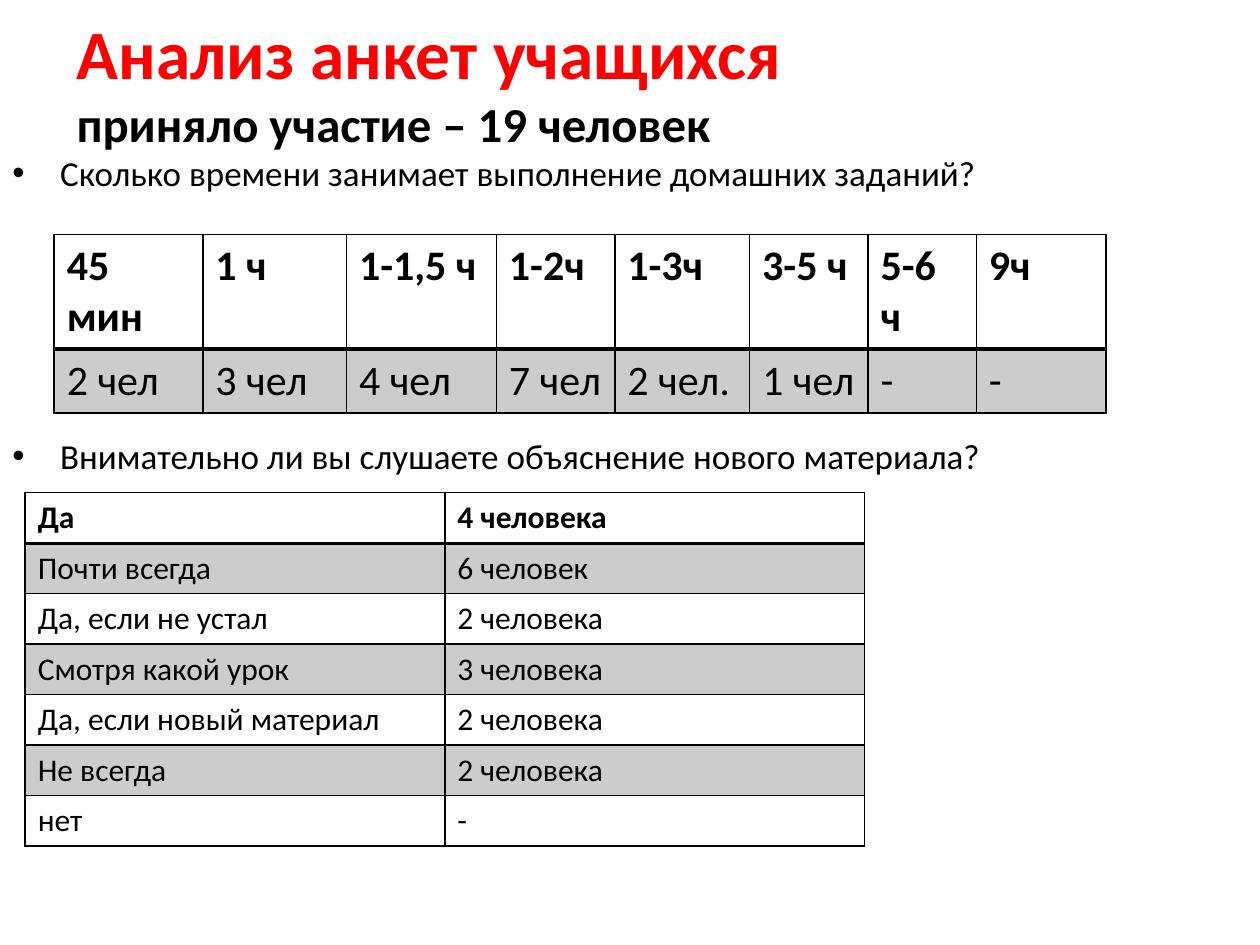
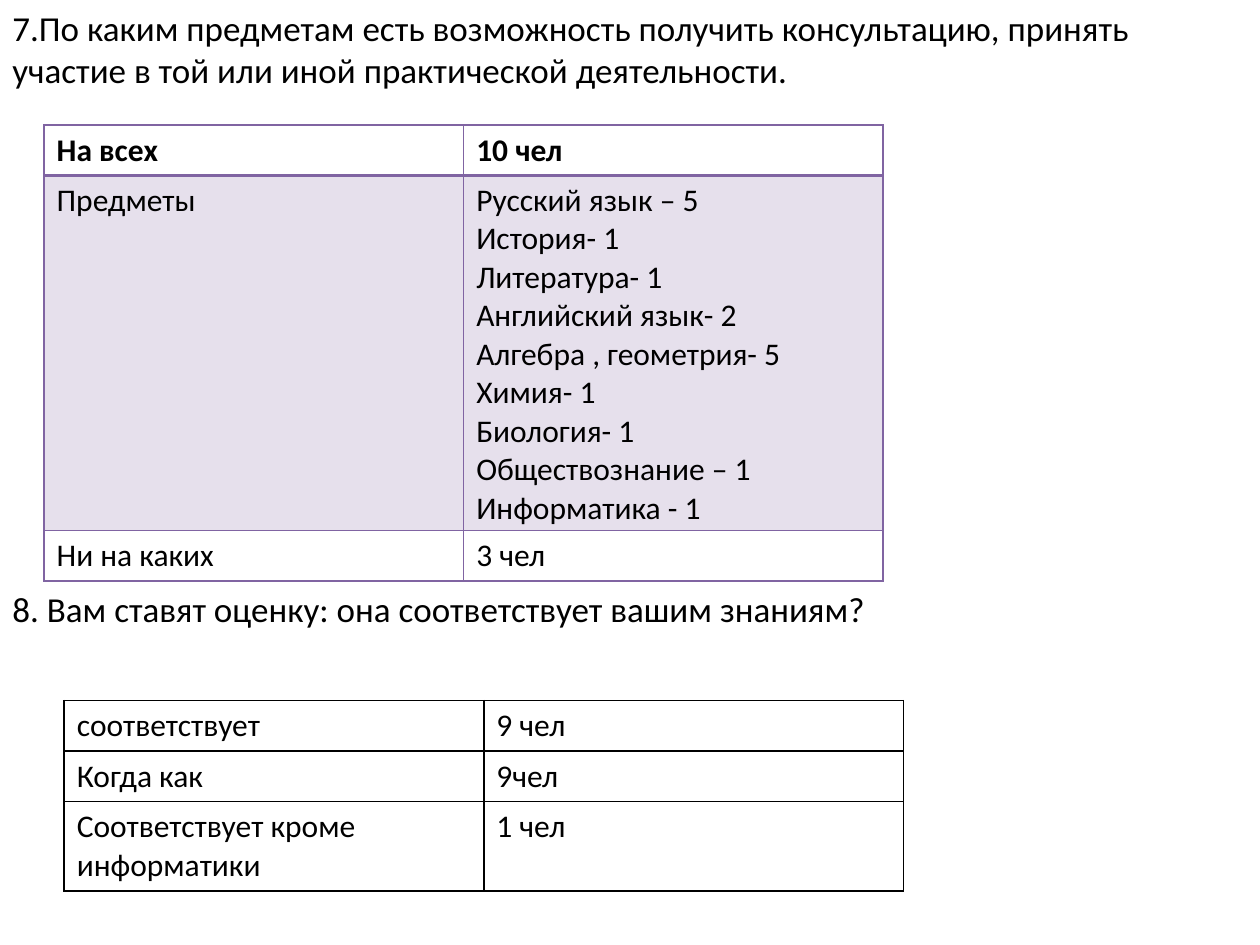
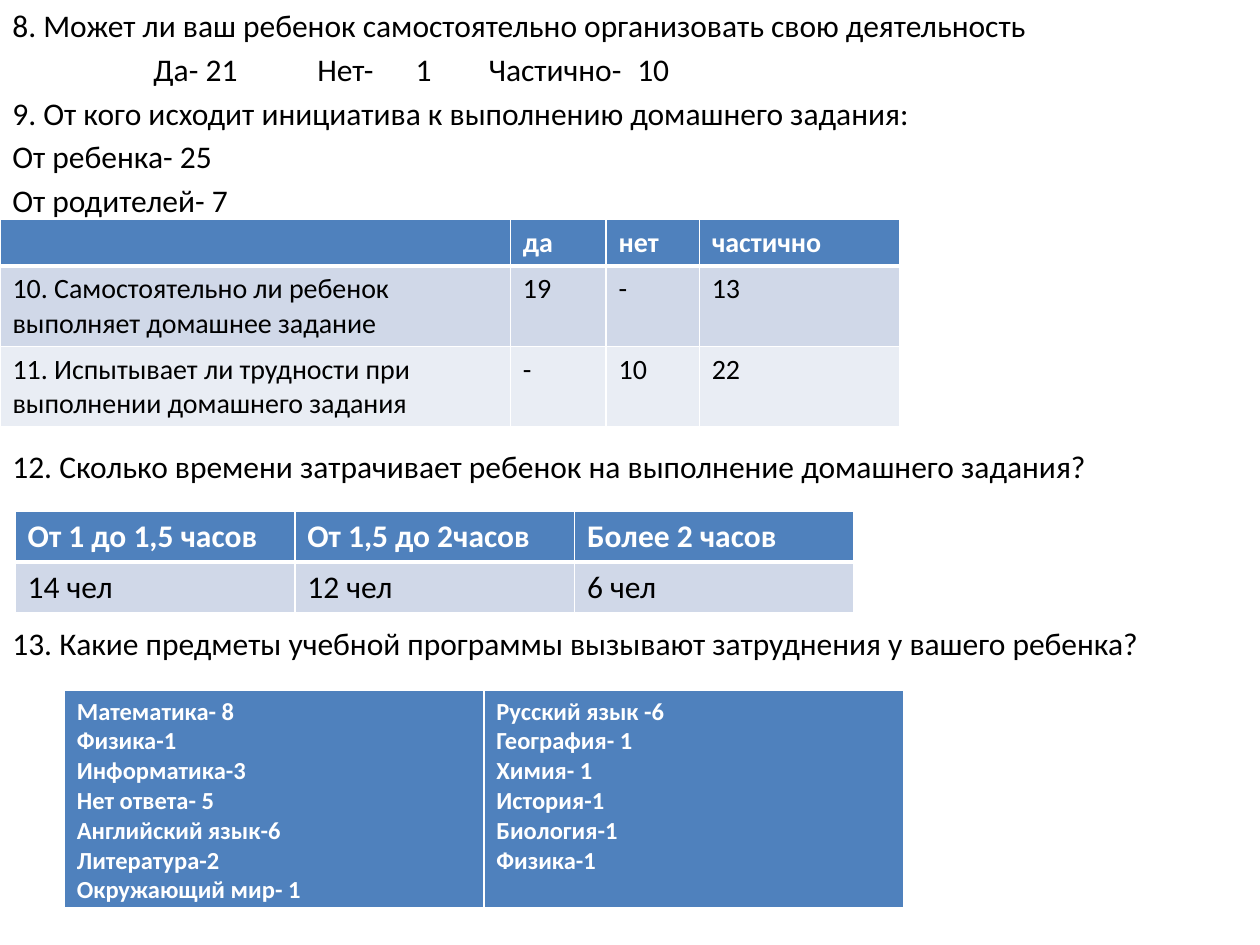
from dataclasses import dataclass

from lxml import etree
from pptx import Presentation
from pptx.dml.color import RGBColor
from pptx.enum.text import MSO_ANCHOR
from pptx.oxml.ns import qn
from pptx.util import Inches, Pt

MIDDLE = MSO_ANCHOR.MIDDLE
FONT = "Calibri"
COLORS = {
    "black": "000000",
    "white": "FFFFFF",
    "red": "FF0000",
    "gray": "CCCCCC",
    "purple": "8064A2",
    "lilac": "E6E0EC",
    "blue": "4F81BD",
    "blue_band": "D0D8E8",
    "blue_pale": "E9EDF4",
}


@dataclass
class TableLook:
    border: str
    header_fill: str = ""
    header_text: str = "black"
    header_bold: bool = True
    header_rule: int = 2
    bands: tuple = ("", "")


GRAY_LOOK = TableLook("black", bands=("gray", ""))
PURPLE_LOOK = TableLook("purple", bands=("lilac", ""))
PLAIN_LOOK = TableLook("black", header_bold=False, header_rule=1)
BLUE_LOOK = TableLook("white", "blue", "white", header_rule=3,
                      bands=("blue_band", "blue_pale"))


def rgb(color):
    return RGBColor.from_string(COLORS[color])


def style_font(font, size, color="black", bold=False):
    font.name = FONT
    font.size = Pt(size)
    font.bold = bold
    font.color.rgb = rgb(color)


def add_text_frame(slide, left, top, width, height):
    frame = slide.shapes.add_textbox(
        Inches(left), Inches(top), Inches(width), Inches(height)).text_frame
    frame.word_wrap = True
    return frame


def add_title(slide, heading, subtitle):
    frame = add_text_frame(slide, 0.51, 0.15, 9, 0.99)
    frame.vertical_anchor = MIDDLE
    paragraph = frame.paragraphs[0]
    heading_run = paragraph.add_run()
    heading_run.text = heading
    style_font(heading_run.font, 39.6, "red", True)
    paragraph.add_line_break()
    subtitle_run = paragraph.add_run()
    subtitle_run.text = subtitle
    style_font(subtitle_run.font, 27.9, bold=True)


def add_bullet(paragraph):
    properties = paragraph._p.get_or_add_pPr()
    properties.set("marL", str(Inches(0.38)))
    properties.set("indent", str(-Inches(0.38)))
    bullet_font = etree.Element(qn("a:buFont"), typeface="Arial")
    bullet = etree.Element(qn("a:buChar"), char="•")
    properties.insert(0, bullet_font)
    properties.insert(1, bullet)


def add_tab_stops(paragraph, positions):
    tabs = etree.Element(qn("a:tabLst"))
    for position in positions:
        etree.SubElement(tabs, qn("a:tab"), pos=str(Inches(position)), algn="l")
    paragraph._p.get_or_add_pPr().insert(0, tabs)


def add_question(slide, top, lines, size, height=0.45, bulleted=False):
    frame = add_text_frame(slide, 0, top, 10, height)
    frame.text = "\n".join(lines)
    for index, paragraph in enumerate(frame.paragraphs):
        style_font(paragraph.font, size)
        if index:
            paragraph.space_before = Pt(3.4)
        if bulleted:
            add_bullet(paragraph)
    return frame


def set_border(cell, side, color, width):
    line = etree.SubElement(cell._tc.get_or_add_tcPr(), qn(f"a:ln{side}"),
                            w=str(Pt(width)))
    fill = etree.SubElement(line, qn("a:solidFill"))
    etree.SubElement(fill, qn("a:srgbClr"), val=COLORS[color])


def style_cell(cell, row, size, look):
    header = row == 0
    widths = {"L": 1, "R": 1,
              "T": look.header_rule if row == 1 else 1,
              "B": look.header_rule if header else 1}
    for side, width in widths.items():
        set_border(cell, side, look.border, width)
    fill = look.header_fill if header else look.bands[(row - 1) % 2]
    if fill:
        cell.fill.solid()
        cell.fill.fore_color.rgb = rgb(fill)
    else:
        cell.fill.background()
    for paragraph in cell.text_frame.paragraphs:
        style_font(paragraph.font, size,
                   look.header_text if header else "black",
                   header and look.header_bold)


def add_answers(slide, left, top, widths, heights, rows, size, look):
    table = slide.shapes.add_table(
        len(rows), len(widths), Inches(left), Inches(top),
        Inches(sum(widths)), Inches(sum(heights))).table
    table.first_row = look.header_bold
    for column, width in zip(table.columns, widths):
        column.width = Inches(width)
    for row, height in zip(table.rows, heights):
        row.height = Inches(height)
    for row, answers in enumerate(rows):
        for column, answer in enumerate(answers):
            cell = table.cell(row, column)
            cell.text = answer
            style_cell(cell, row, size, look)


def build_pupil_survey(slide):
    add_title(slide, "Анализ анкет учащихся", "приняло участие – 19 человек")
    add_question(slide, 1.15,
                 ["Сколько времени занимает выполнение домашних заданий?"],
                 20, bulleted=True)
    add_question(slide, 3.4,
                 ["Внимательно ли вы слушаете объяснение нового материала?"],
                 20, bulleted=True)
    homework_time = [
        ["45 мин", "1 ч", "1-1,5 ч", "1-2ч", "1-3ч", "3-5 ч", "5-6 ч", "9ч"],
        ["2 чел", "3 чел", "4 чел", "7 чел", "2 чел.", "1 чел", "-", "-"],
    ]
    add_answers(slide, 0.43, 1.86,
                [1.18, 1.14, 1.19, 0.94, 1.07, 0.94, 0.86, 1.03],
                [0.91, 0.51], homework_time, 24, GRAY_LOOK)
    attention = [
        ["Да", "4 человека"],
        ["Почти всегда", "6 человек"],
        ["Да, если не устал", "2 человека"],
        ["Смотря какой урок", "3 человека"],
        ["Да, если новый материал", "2 человека"],
        ["Не всегда", "2 человека"],
        ["нет", "-"],
    ]
    add_answers(slide, 0.2, 3.91, [3.33] * 2, [0.4] * 7, attention, 18,
                GRAY_LOOK)


def build_consultations(slide):
    add_question(slide, 0, [
        "7.По каким предметам есть возможность получить консультацию, принять "
        "участие в той или иной практической деятельности."], 20, 0.8)
    add_question(slide, 4.61, [
        "8. Вам ставят оценку: она соответствует вашим знаниям?"], 20)
    subjects = [
        "Русский язык – 5", "История- 1", "Литература- 1",
        "Английский язык- 2", "Алгебра , геометрия- 5", "Химия- 1",
        "Биология- 1", "Обществознание – 1", "Информатика - 1",
    ]
    consultations = [
        ["На всех", "10 чел"],
        ["Предметы", "\n".join(subjects)],
        ["Ни на каких", "3 чел"],
    ]
    add_answers(slide, 0.35, 0.99, [3.33] * 2, [0.4, 2.82, 0.4],
                consultations, 18, PURPLE_LOOK)
    grades = [
        ["соответствует", "9 чел"],
        ["Когда как", "9чел"],
        ["Соответствует кроме информатики", "1 чел"],
    ]
    add_answers(slide, 0.51, 5.56, [3.33] * 2, [0.4, 0.4, 0.71], grades, 18,
                PLAIN_LOOK)


def build_parent_survey(slide):
    independence = add_question(slide, 0, [
        "8. Может ли ваш ребенок самостоятельно организовать свою деятельность",
        "\tДа- 21\tНет-\t1\tЧастично-\t10",
        "9. От кого исходит инициатива к выполнению домашнего задания:",
        "От ребенка- 25",
        "От родителей- 7",
    ], 18, 1.8)
    add_tab_stops(independence.paragraphs[1], [1.12, 2.42, 3.2, 3.78, 4.96])
    add_question(slide, 3.5, [
        "12. Сколько времени затрачивает ребенок на выполнение домашнего "
        "задания?"], 18)
    add_question(slide, 4.9, [
        "13. Какие предметы учебной программы вызывают затруднения у вашего "
        "ребенка?"], 18)
    homework = [
        ["", "да", "нет", "частично"],
        ["10. Самостоятельно ли ребенок выполняет домашнее задание",
         "19", "-", "13"],
        ["11. Испытывает ли трудности при выполнении домашнего задания",
         "-", "10", "22"],
    ]
    add_answers(slide, 0, 1.74, [4.05, 0.76, 0.74, 1.59], [0.37, 0.64, 0.64],
                homework, 16, BLUE_LOOK)
    time_spent = [
        ["От 1 до 1,5 часов", "От 1,5 до 2часов", "Более 2 часов"],
        ["14 чел", "12 чел", "6 чел"],
    ]
    add_answers(slide, 0.12, 4.06, [2.22] * 3, [0.4] * 2, time_spent, 18,
                BLUE_LOOK)
    difficult_subjects = [
        ["Математика- 8", "Физика-1", "Информатика-3", "Нет ответа- 5",
         "Английский язык-6", "Литература-2", "Окружающий мир- 1"],
        ["Русский язык -6", "География- 1", "Химия- 1", "История-1",
         "Биология-1", "Физика-1"],
    ]
    add_answers(slide, 0.51, 5.48, [3.33] * 2, [1.73],
                [["\n".join(subjects) for subjects in difficult_subjects]],
                14, BLUE_LOOK)


def main():
    presentation = Presentation()
    presentation.slide_width = Inches(10)
    presentation.slide_height = Inches(7.5)
    blank = presentation.slide_layouts[6]
    for build in (build_pupil_survey, build_consultations, build_parent_survey):
        build(presentation.slides.add_slide(blank))
    presentation.save("out.pptx")


if __name__ == "__main__":
    main()
